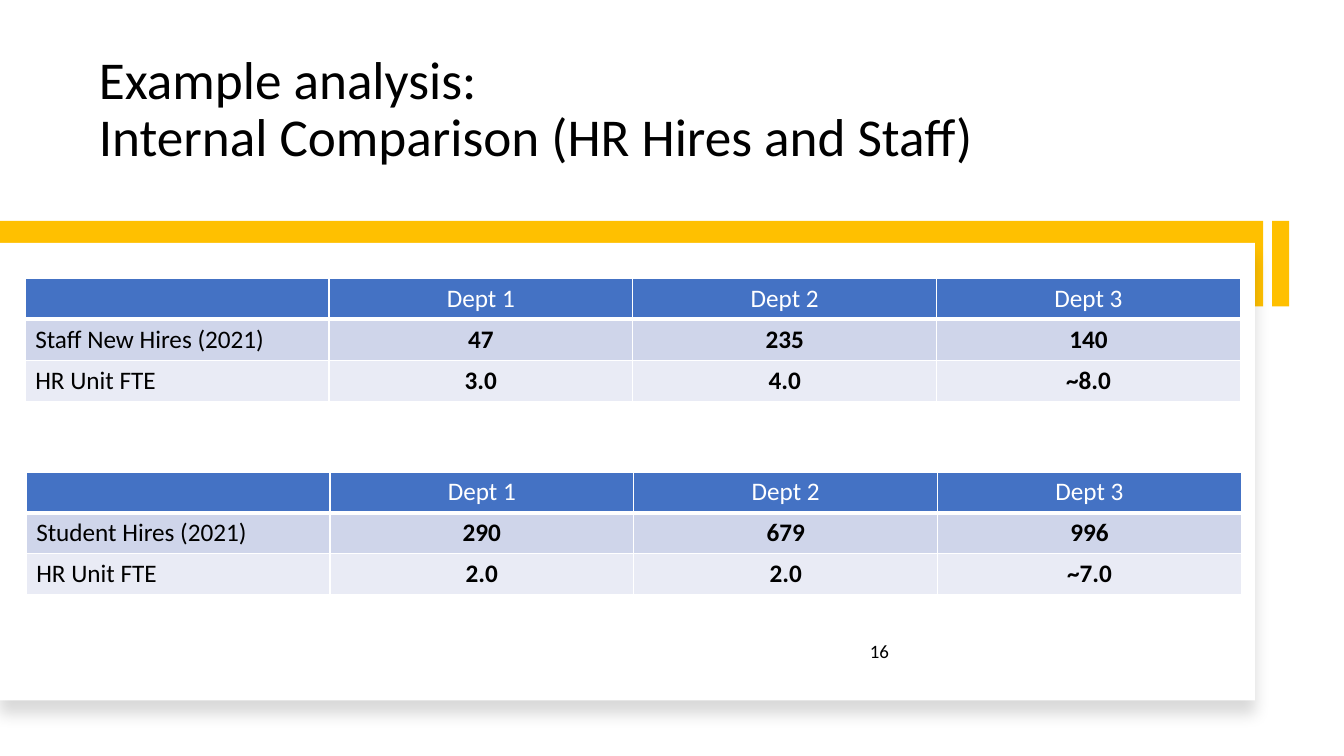
"""Builds a slide that compares HR hires and staff across three departments."""
from lxml import etree
from pptx import Presentation
from pptx.dml.color import RGBColor
from pptx.enum import shapes, text
from pptx.oxml import ns
from pptx.util import Pt

WHITE = RGBColor(0xFF, 0xFF, 0xFF)
BLACK = RGBColor(0, 0, 0)
GOLD = RGBColor(0xFF, 0xC0, 0x00)
BLUE = RGBColor(0x44, 0x72, 0xC4)
BANDS = [BLUE, RGBColor(0xCF, 0xD5, 0xEA), RGBColor(0xE9, 0xEB, 0xF5)]

TITLE = "Example analysis:\vInternal Comparison (HR Hires and Staff)"
PAGE = "16"
HEAD = ["", "Dept 1", "Dept 2", "Dept 3"]
TABLES = [
    (18, 198.9, [HEAD,
                 ["Staff New Hires (2021)", "47", "235", "140"],
                 ["HR Unit FTE", "3.0", "4.0", "~8.0"]]),
    (18.7, 337.1, [HEAD,
                   ["Student Hires (2021)", "290", "679", "996"],
                   ["HR Unit FTE", "2.0", "2.0", "~7.0"]]),
]
COL, ROW = 217, 29.2


def style(frame, size, color, bold=False):
    for par in frame.paragraphs:
        for run in par.runs:
            run.font.name = "Calibri"
            run.font.size = Pt(size)
            run.font.bold = bold
            run.font.color.rgb = color


def add_rect(parent, box, color):
    rect = parent.add_shape(shapes.MSO_SHAPE.RECTANGLE, *map(Pt, box))
    rect.shadow.inherit = False
    rect.fill.solid()
    rect.fill.fore_color.rgb = color
    rect.line.fill.background()
    return rect


def add_node(parent, tag, **attrs):
    node = etree.SubElement(parent, ns.qn(tag))
    for key, val in attrs.items():
        node.set(key, str(val))
    return node


def add_shadow(shape):
    effects = shape.element.spPr.find(ns.qn("a:effectLst"))
    outer = add_node(effects, "a:outerShdw", blurRad=Pt(11), dist=Pt(10),
                     dir=90 * 60000, algn="t", rotWithShape=0)
    color = add_node(outer, "a:srgbClr", val=BLACK)
    add_node(color, "a:alpha", val=15000)


def add_borders(cell, low):
    props = cell._tc.get_or_add_tcPr()
    for i, (side, width) in enumerate(zip("LRTB", (1, 1, 1, low))):
        line = add_node(props, f"a:ln{side}", w=Pt(width))
        add_node(add_node(line, "a:solidFill"), "a:srgbClr", val=WHITE)
        props.insert(i, line)


def add_grid(slide, left, top, rows):
    count, wide = len(rows), len(HEAD)
    grid = slide.shapes.add_table(count, wide, Pt(left), Pt(top),
                                  Pt(COL * wide), Pt(ROW * count)).table
    for col in grid.columns:
        col.width = Pt(COL)
    for r, row in enumerate(rows):
        grid.rows[r].height = Pt(ROW)
        for c, word in enumerate(row):
            cell = grid.cell(r, c)
            cell.text_frame.text = word
            cell.fill.solid()
            cell.fill.fore_color.rgb = BANDS[r]
            add_borders(cell, 1 if r else 3)
            style(cell.text_frame, 18, BLACK if r else WHITE, r > 0 and c > 0)
            if c:
                cell.text_frame.paragraphs[0].alignment = text.PP_ALIGN.CENTER


def main():
    deck = Presentation()
    deck.slide_width, deck.slide_height = Pt(960), Pt(540)
    slide = deck.slides.add_slide(deck.slide_layouts[5])

    title = slide.shapes.title
    title.left, title.top = Pt(63.4), Pt(30.2)
    title.width, title.height = Pt(727.2), Pt(93.6)
    frame = title.text_frame
    frame.text = TITLE
    frame.auto_size = text.MSO_AUTO_SIZE.NONE
    frame.vertical_anchor = text.MSO_ANCHOR.BOTTOM
    frame.paragraphs[0].alignment = text.PP_ALIGN.LEFT
    frame.paragraphs[0].line_spacing = 0.9
    style(frame, 38, BLACK)

    accent = slide.shapes.add_group_shape().shapes
    add_rect(accent, (884.2, 182.2, 61.2, 12.2), GOLD).rotation = 90
    add_rect(accent, (0, 157.7, 902.2, 61.2), GOLD)
    add_shadow(add_rect(slide.shapes, (0, 173.5, 896.4, 326.9), WHITE))

    page = slide.shapes.add_textbox(Pt(614.2), Pt(453.6), Pt(164.2), Pt(21.6))
    page.text_frame.word_wrap = True
    page.text_frame.text = PAGE
    page.text_frame.paragraphs[0].space_after = Pt(6)
    style(page.text_frame, 13.5, BLACK)

    for left, top, rows in TABLES:
        add_grid(slide, left, top, rows)
    deck.save("out.pptx")


if __name__ == "__main__":
    main()
